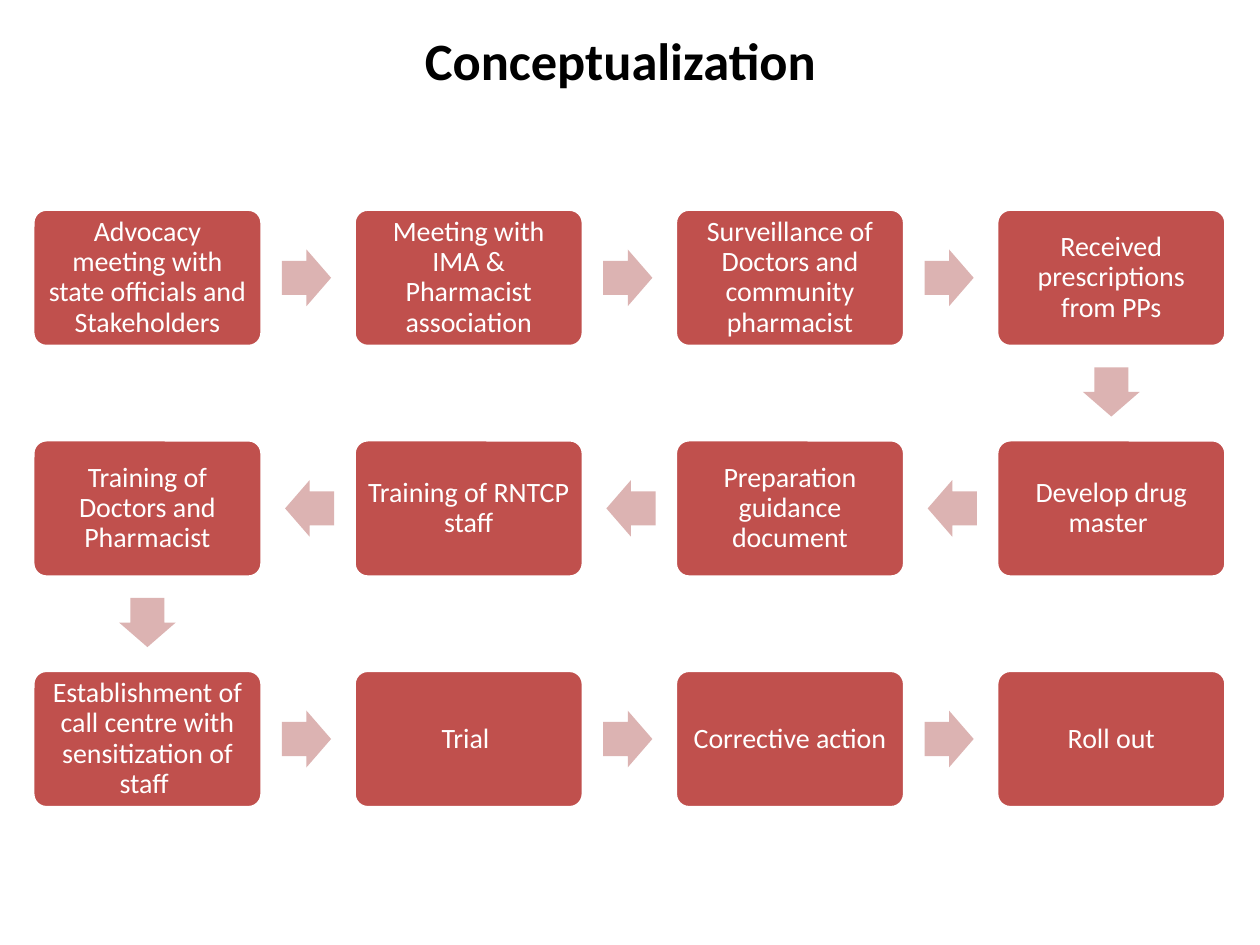
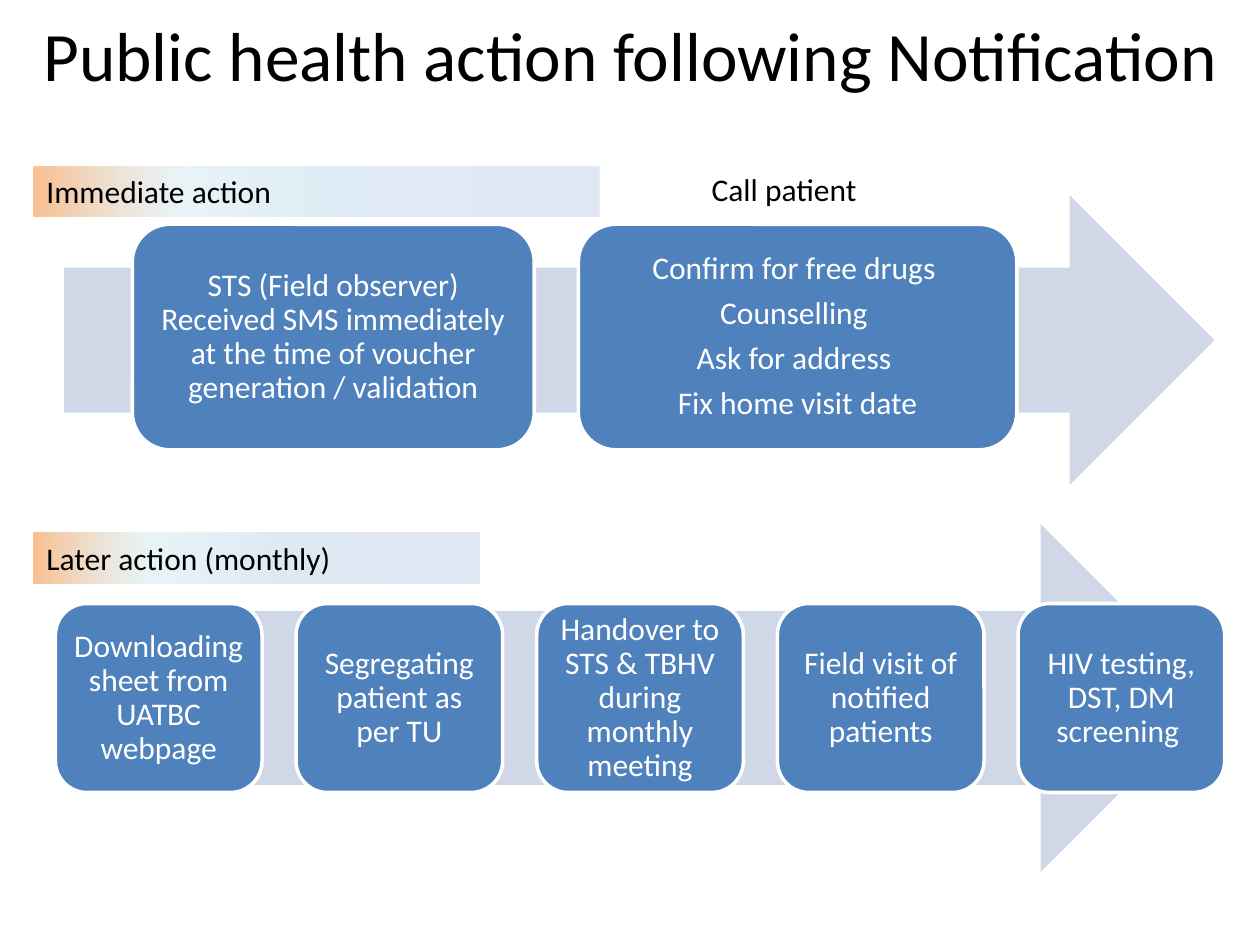
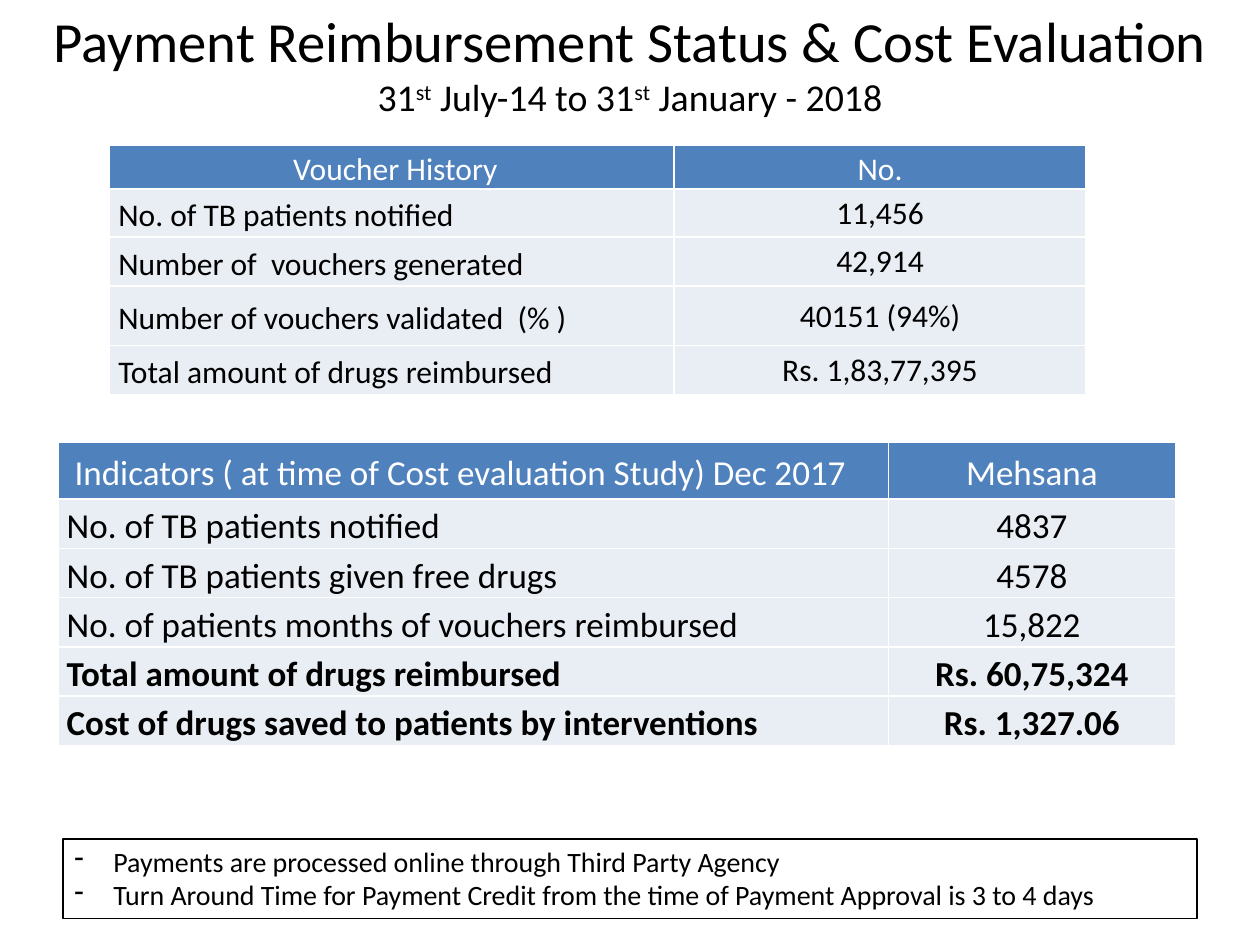
from lxml.etree import SubElement
from pptx import Presentation
from pptx.dml.color import RGBColor
from pptx.enum.shapes import MSO_SHAPE as Kind
from pptx.enum.text import MSO_ANCHOR as Anchor, MSO_AUTO_SIZE as AutoSize, PP_ALIGN as Align
from pptx.oxml import parse_xml
from pptx.oxml.ns import nsdecls, qn
from pptx.util import Inches, Pt

FONT = "Calibri"
BLACK, WHITE = "000000", "FFFFFF"
RED, PINK = "C0504D", "DCB3B2"
BLUE, PALE_BLUE, ROW_TINT = "4F81BD", "D0D8E8", "E9EDF4"
FADE = [(0, "FAC090", 100), (26, "DBEEF4", 61), (55, "DEEBF5", 100), (83, "E1E8F5", 100)]
PLAIN_INSET = (0.1, 0.05, 0.1, 0.05)
BOX_INSET = (0.07,) * 4

STEPS = [
    "Advocacy meeting with state officials and Stakeholders",
    "Meeting with IMA & Pharmacist association",
    "Surveillance of Doctors and community pharmacist",
    "Received prescriptions from PPs",
    "Develop drug master ",
    "Preparation guidance document",
    "Training of RNTCP staff",
    "Training of Doctors and Pharmacist",
    "Establishment of call centre with sensitization of staff ",
    "Trial ",
    "Corrective action",
    "Roll out",
]
LATER = [
    "Downloading sheet from UATBC webpage",
    "Segregating patient as per TU",
    "Handover to STS & TBHV during monthly meeting",
    "Field visit of notified patients",
    "HIV testing, DST, DM screening ",
]
IMMEDIATE = [
    ((1.05, 1.78, 3.19, 1.79),
     ["STS (Field observer) Received SMS immediately at the time of voucher generation / validation"]),
    ((4.59, 1.78, 3.48, 1.79),
     ["Confirm for free drugs ", "Counselling ", "Ask for address ", "Fix home visit date"]),
]
LABELS = [("Later action (monthly)", (0.27, 4.23, 3.54, 0.4)),
          ("Immediate action", (0.27, 1.32, 4.49, 0.4))]
PERIOD = [("31", False), ("st", True), (" July-14 to 31", False), ("st", True),
          (" January - 2018", False)]
VOUCHERS = {
    "at": (0.87, 1.15, 7.75, 1.99), "columns": (4.48, 3.27), "size": 18,
    "heights": (0.34, 0.38, 0.39, 0.47, 0.39), "bold_from": 5,
    "head_align": Align.CENTER, "head_anchor": Anchor.TOP, "body_anchor": Anchor.MIDDLE,
    "inset": (0.07, 0, 0.07, 0), "value_inset": (0.01, 0.01, 0.01, 0), "value_spacing": 1.0,
    "rows": [
        (" Voucher History", "No."),
        ("No. of TB patients notified", "11,456"),
        ("Number of  vouchers generated", "42,914"),
        ("Number of vouchers validated  (% )", "40151 (94%)"),
        ("Total amount of drugs reimbursed", "Rs. 1,83,77,395"),
    ],
}
INDICATORS = {
    "at": (0.46, 3.51, 8.87, 2.37), "columns": (6.59, 2.28), "size": 20,
    "heights": (0.45,) + (0.38,) * 5, "bold_from": 4,
    "head_align": Align.LEFT, "head_anchor": Anchor.MIDDLE, "body_anchor": Anchor.TOP,
    "inset": (0.07, 0, 0.07, 0), "value_inset": (0.07, 0, 0.07, 0), "value_spacing": 1.15,
    "rows": [
        (" Indicators ( at time of Cost evaluation Study) Dec 2017", "Mehsana"),
        ("No. of TB patients notified", "4837"),
        ("No. of TB patients given free drugs", "4578"),
        ("No. of patients months of vouchers reimbursed", "15,822"),
        ("Total amount of drugs reimbursed", "Rs. 60,75,324"),
        ("Cost of drugs saved to patients by interventions", "Rs. 1,327.06"),
    ],
}
NOTES = ["Payments are processed online through Third Party Agency",
         "Turn Around Time for Payment Credit from the time of Payment Approval is 3 to 4 days"]


def color(value):
    """Turn a hex string into a colour."""
    return RGBColor.from_string(value)


def assign(target, values):
    """Set attributes from a dict."""
    for name, value in values.items():
        setattr(target, name, value)


def style(span, size, ink=BLACK, bold=False):
    """Format the font of a run."""
    assign(span.font, {"name": FONT, "size": Pt(size), "bold": bold})
    span.font.color.rgb = color(ink)


def set_margins(holder, inset):
    """Set the left, top, right and bottom insets."""
    sides = ("margin_left", "margin_top", "margin_right", "margin_bottom")
    assign(holder, dict(zip(sides, map(Inches, inset))))


def write(frame, lines, size, ink=BLACK, bold=False, **layout):
    """Fill a text frame with one paragraph per line."""
    for index, line in enumerate(lines):
        para = frame.paragraphs[0] if index == 0 else frame.add_paragraph()
        assign(para, layout)
        span = para.add_run()
        span.text = line
        style(span, size, ink, bold)


def frame_of(shape, inset=PLAIN_INSET, anchor=Anchor.TOP, wrap=True):
    """Prepare the text frame of a shape."""
    frame = shape.text_frame
    assign(frame, {"word_wrap": wrap, "auto_size": AutoSize.NONE, "vertical_anchor": anchor})
    set_margins(frame, inset)
    return frame


def add_title(page, at, anchor=Anchor.MIDDLE):
    """Place the title and return its frame."""
    title = page.shapes.title
    assign(title, dict(zip(("left", "top", "width", "height"), map(Inches, at))))
    return frame_of(title, anchor=anchor)


def add_shape(page, kind, at, fill=None, line=None, weight=2):
    """Add a flat preset shape."""
    shape = page.shapes.add_shape(kind, *map(Inches, at))
    shape.shadow.inherit = False
    if fill:
        shape.fill.solid()
        shape.fill.fore_color.rgb = color(fill)
    else:
        shape.fill.background()
    if line:
        shape.line.color.rgb = color(line)
        shape.line.width = Pt(weight)
    else:
        shape.line.fill.background()
    return shape


def add_box(page, at, lines, fill, size):
    """Add a rounded box with centred white text."""
    box = add_shape(page, Kind.ROUNDED_RECTANGLE, at, fill, WHITE)
    write(frame_of(box, BOX_INSET, Anchor.MIDDLE), lines, size, WHITE,
          alignment=Align.CENTER, line_spacing=0.9, space_after=Pt(0.35 * size))
    return box


def add_label(page, text, at):
    """Add a heading strip that fades from left to right."""
    label = add_shape(page, Kind.RECTANGLE, at, WHITE)
    label.fill.gradient()
    label.fill.gradient_angle = 0
    stops = label._element.spPr.find(qn("a:gradFill")).find(qn("a:gsLst"))
    for stop in list(stops):
        stops.remove(stop)
    for place, value, opacity in FADE:
        stop = SubElement(stops, qn("a:gs"), pos=str(place * 1000))
        tint = SubElement(stop, qn("a:srgbClr"), val=value)
        if opacity < 100:
            SubElement(tint, qn("a:alpha"), val=str(opacity * 1000))
    write(frame_of(label), [text], 18, alignment=Align.LEFT)


def fill_cell(cell, fill):
    """Give a cell its fill and thin white borders."""
    cell.fill.solid()
    cell.fill.fore_color.rgb = color(fill)
    for index, side in enumerate(("lnL", "lnR", "lnT", "lnB")):
        border = parse_xml(
            f'<a:{side} {nsdecls("a")} w="12700"><a:solidFill>'
            f'<a:srgbClr val="{WHITE}"/></a:solidFill></a:{side}>')
        cell._tc.get_or_add_tcPr().insert(index, border)


def add_table(page, spec):
    """Add a two-column table with a blue header."""
    rows = spec["rows"]
    table = page.shapes.add_table(len(rows), 2, *map(Inches, spec["at"])).table
    assign(table, {"first_row": False, "horz_banding": False})
    for column, width in zip(table.columns, spec["columns"]):
        column.width = Inches(width)
    for row, height in zip(table.rows, spec["heights"]):
        row.height = Inches(height)
    for r, texts in enumerate(rows):
        head = r == 0
        for c, text in enumerate(texts):
            cell = table.cell(r, c)
            value = c == 1 and not head
            fill_cell(cell, BLUE if head else ROW_TINT)
            set_margins(cell, spec["value_inset" if value else "inset"])
            cell.vertical_anchor = spec["head_anchor" if head else "body_anchor"]
            first_align = spec["head_align"] if head else Align.LEFT
            write(cell.text_frame, [text], spec["size"], WHITE if head else BLACK,
                  r >= spec["bold_from"], alignment=Align.CENTER if c else first_align,
                  line_spacing=spec["value_spacing"] if value else 1.15)


def build_concept(page):
    """Lay the steps out as a snake of boxes and arrows."""
    write(add_title(page, (2.08, 0.17, 5.69, 0.61), Anchor.TOP), ["Conceptualization"], 30,
          bold=True, alignment=Align.CENTER)
    columns, left, top, step_x, step_y = 4, 0.26, 1.66, 2.55, 1.83
    width, height, arrow_width, arrow_height, reach = 1.82, 1.09, 0.39, 0.45, 0.495
    for index, text in enumerate(STEPS):
        row, place = divmod(index, columns)
        direction = -1 if row % 2 else 1
        column = place if direction == 1 else columns - 1 - place
        x, y = left + column * step_x, top + row * step_y
        add_box(page, (x, y, width, height), [text], RED, 16).adjustments[0] = 0.1
        if index == len(STEPS) - 1:
            break
        turn = place == columns - 1
        x += width / 2 + (0 if turn else direction * reach * step_x) - arrow_width / 2
        y += height / 2 + (reach * step_y if turn else 0) - arrow_height / 2
        arrow = add_shape(page, Kind.RIGHT_ARROW, (x, y, arrow_width, arrow_height), PINK)
        arrow.adjustments[0] = 0.6
        arrow.rotation = 90 if turn else 90 - 90 * direction


def build_actions(page):
    """Show immediate and later actions on two wide arrows."""
    write(add_title(page, (0.01, 0.01, 9.99, 0.83)),
          ["Public health action following Notification"], 39.6, alignment=Align.CENTER)
    add_shape(page, Kind.RIGHT_ARROW, (0.51, 4.16, 9.13, 2.76), PALE_BLUE)
    for index, text in enumerate(LATER):
        add_box(page, (0.44 + 1.91 * index, 4.79, 1.64, 1.5), [text], BLUE, 18)
    add_shape(page, Kind.RIGHT_ARROW, (0.51, 1.55, 9.13, 2.3), PALE_BLUE)
    for at, lines in IMMEDIATE:
        add_box(page, at, lines, BLUE, 18)
    for text, at in LABELS:
        add_label(page, text, at)
    call = page.shapes.add_textbox(*map(Inches, (5.55, 1.3, 1.37, 0.4)))
    write(frame_of(call, wrap=False), ["Call patient"], 18)


def build_costs(page):
    """Show the voucher and cost tables above the payment notes."""
    frame = add_title(page, (0, 0, 10, 0.99))
    write(frame, ["Payment Reimbursement Status & Cost Evaluation"], 32.4, alignment=Align.CENTER)
    para = frame.paragraphs[0]
    para.add_line_break()
    for text, raised in PERIOD:
        span = para.add_run()
        span.text = text
        style(span, 21.6)
        if raised:
            span._r.get_or_add_rPr().set("baseline", "30000")
    add_table(page, VOUCHERS)
    add_table(page, INDICATORS)
    box = add_shape(page, Kind.RECTANGLE, (0.5, 6.66, 9, 0.63), line=BLACK, weight=0.75)
    frame = frame_of(box, (0.09, 0.04, 0.09, 0.04))
    write(frame, NOTES, 16, alignment=Align.LEFT)
    for para in frame.paragraphs:
        settings = para._p.get_or_add_pPr()
        settings.set("marL", str(Inches(0.31)))
        settings.set("indent", str(-Inches(0.31)))
        SubElement(settings, qn("a:buChar"), char="-")


def main():
    """Build the deck and save it."""
    deck = Presentation()
    assign(deck, {"slide_width": Inches(10), "slide_height": Inches(7.5)})
    for build in (build_concept, build_actions, build_costs):
        build(deck.slides.add_slide(deck.slide_layouts[5]))
    deck.save("out.pptx")


if __name__ == "__main__":
    main()
